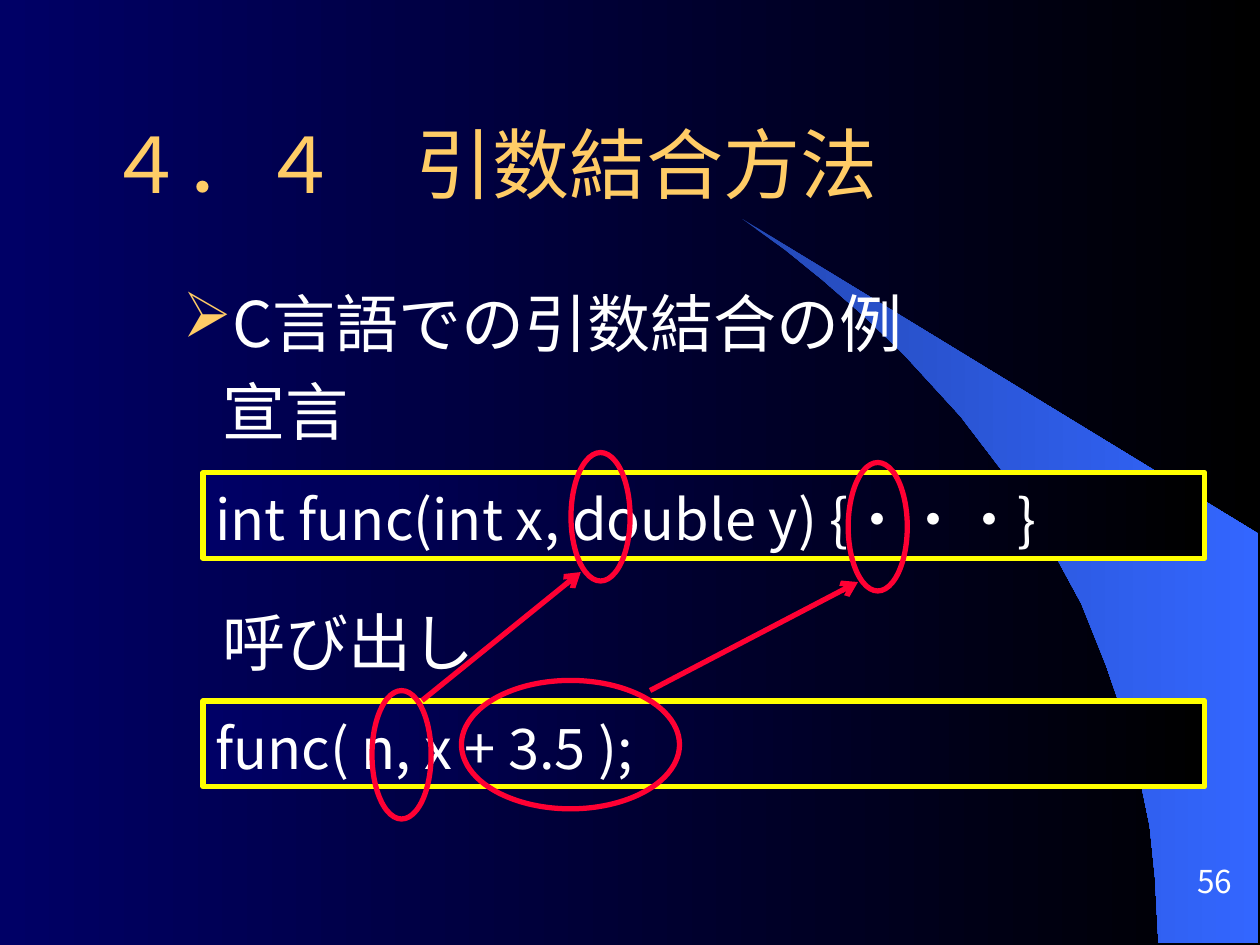
from lxml import etree
from pptx import Presentation
from pptx import util as u
from pptx.dml.color import RGBColor
from pptx.enum import shapes, text
from pptx.oxml.ns import qn

NAVY = RGBColor(0x00, 0x00, 0x66)
BLACK = RGBColor(0x00, 0x00, 0x00)
WHITE = RGBColor(0xFF, 0xFF, 0xFF)
GOLD = RGBColor(0xFF, 0xCC, 0x66)
YELLOW = RGBColor(0xFF, 0xFF, 0x00)
RED = RGBColor(0xFF, 0x00, 0x33)
DEEP_BLUE = RGBColor(0x24, 0x49, 0xB6)
BLUE = RGBColor(0x33, 0x66, 0xFF)
JAPANESE_FONT = "Noto Sans CJK JP"

# Corner points of the curved wedge, in points.
WEDGE = [
    (662.4, 538.6), (719.3, 539.3), (719.3, 304.6), (424.1, 124.6),
    (449.3, 143.3), (470.2, 159.8), (493.2, 180), (515.5, 201.6),
    (548.6, 237.6), (578.2, 276.5), (599, 310.3), (617.8, 344.9),
    (632.2, 380.2), (643, 411.8), (650.2, 438.5), (657.4, 472.3),
    (660.2, 501.1),
]


def points(*lengths):
    return [u.Pt(length) for length in lengths]


def fill_gradient(fill, start, end):
    fill.gradient()
    fill.gradient_angle = 0
    for stop, colour, position in zip(fill.gradient_stops, (start, end), (0, 1)):
        stop.color.rgb = colour
        stop.position = position


def set_line(shape, colour):
    shape.line.color.rgb = colour
    shape.line.width = u.Pt(3)


def write(para, words, size=36, font=JAPANESE_FONT, colour=WHITE,
          spacing=None, before=0, align=text.PP_ALIGN.LEFT):
    para.alignment = align
    para.space_before = u.Pt(before)
    if spacing:
        para.line_spacing = u.Pt(spacing)
    span = para.add_run()
    span.text = words
    span.font.size = u.Pt(size)
    span.font.name = font
    span.font.color.rgb = colour
    east_asian = etree.SubElement(span.font._element, qn("a:ea"))
    east_asian.set("typeface", JAPANESE_FONT)


def set_frame(shape, side=7.2, top=3.6, bottom=3.6,
              anchor=text.MSO_ANCHOR.TOP, wrap=True):
    frame = shape.text_frame
    frame.margin_left = frame.margin_right = u.Pt(side)
    frame.margin_top, frame.margin_bottom = points(top, bottom)
    frame.vertical_anchor = anchor
    frame.word_wrap = wrap
    frame.auto_size = text.MSO_AUTO_SIZE.NONE
    return frame


def indent(para, bullet=None):
    """Set the left margin, with a hanging gold bullet if one is given."""
    settings = para._p.get_or_add_pPr()
    settings.set("marL", str(u.Pt(58.5)))
    settings.set("indent", str(u.Pt(-22.5 if bullet else 0)))
    if bullet:
        colour = etree.SubElement(settings, qn("a:buClr"))
        etree.SubElement(colour, qn("a:srgbClr")).set("val", str(GOLD))
        etree.SubElement(settings, qn("a:buChar")).set("char", bullet)


def add_wedge(page):
    builder = page.shapes.build_freeform(*WEDGE[0], scale=u.Pt(1))
    builder.add_line_segments(WEDGE[1:], close=True)
    wedge = builder.convert_to_shape()
    wedge.shadow.inherit = False
    wedge.line.fill.background()
    fill_gradient(wedge.fill, DEEP_BLUE, BLUE)


def add_title(page, words):
    title = page.shapes.title
    title.left, title.top, title.width, title.height = points(54, 48.2, 636.5, 90)
    frame = set_frame(title, anchor=text.MSO_ANCHOR.MIDDLE)
    write(frame.paragraphs[0], words, size=44, font="Arial", colour=GOLD)


def add_body(page):
    box = page.shapes.add_textbox(*points(54, 156.2, 612, 193.7))
    frame = set_frame(box, side=14.4, top=6.6)
    lines = [("C言語での引数結合の例", 0, "➢"), ("宣言", 7.2, None),
             ("呼び出し", 89, None)]
    for number, (words, before, bullet) in enumerate(lines):
        para = frame.add_paragraph() if number else frame.paragraphs[0]
        write(para, words, spacing=43, before=before)
        indent(para, bullet)


def add_code(page, top, words):
    box = page.shapes.add_shape(shapes.MSO_SHAPE.RECTANGLE,
                                *points(116, top, 572.4, 49))
    box.shadow.inherit = False
    fill_gradient(box.fill, NAVY, BLACK)
    set_line(box, YELLOW)
    write(set_frame(box, top=7).paragraphs[0], words, size=32, spacing=38.4)


def add_ring(page, left, top, width=33.8):
    ring = page.shapes.add_shape(shapes.MSO_SHAPE.OVAL,
                                 *points(left, top, width, 73.4))
    ring.shadow.inherit = False
    ring.fill.background()
    set_line(ring, RED)


def add_arrow(page, *ends):
    arrow = page.shapes.add_connector(shapes.MSO_CONNECTOR.STRAIGHT, *points(*ends))
    set_line(arrow, RED)
    etree.SubElement(arrow.line._get_or_add_ln(), qn("a:tailEnd")).set("type", "arrow")
    etree.SubElement(arrow._element.spPr, qn("a:effectLst"))


def add_page_number(page, number):
    box = page.shapes.add_textbox(*points(638, 483.8, 73.4, 30.2))
    frame = set_frame(box, top=0, bottom=0, anchor=text.MSO_ANCHOR.BOTTOM, wrap=False)
    write(frame.paragraphs[0], number, size=18, align=text.PP_ALIGN.RIGHT)


def main():
    deck = Presentation()
    deck.slide_width, deck.slide_height = points(720, 540)
    page = deck.slides.add_slide(deck.slide_layouts.get_by_name("Title Only"))
    fill_gradient(page.background.fill, NAVY, BLACK)
    add_wedge(page)
    add_title(page, "４．４　引数結合方法")
    add_body(page)
    add_page_number(page, "56")
    add_code(page, 270, "int func(int x, double y) {・・・}")
    add_code(page, 400.5, "func( n, x + 3.5 );")
    add_ring(page, 212.6, 394.6)
    add_ring(page, 326.3, 258.6)
    add_ring(page, 263.7, 388.8, width=124.6)
    add_ring(page, 484.7, 264.3)
    add_arrow(page, 371.5, 394.6, 490.3, 332.6)
    add_arrow(page, 241.2, 400.3, 331.9, 326.9)
    deck.save("out.pptx")


if __name__ == "__main__":
    main()
